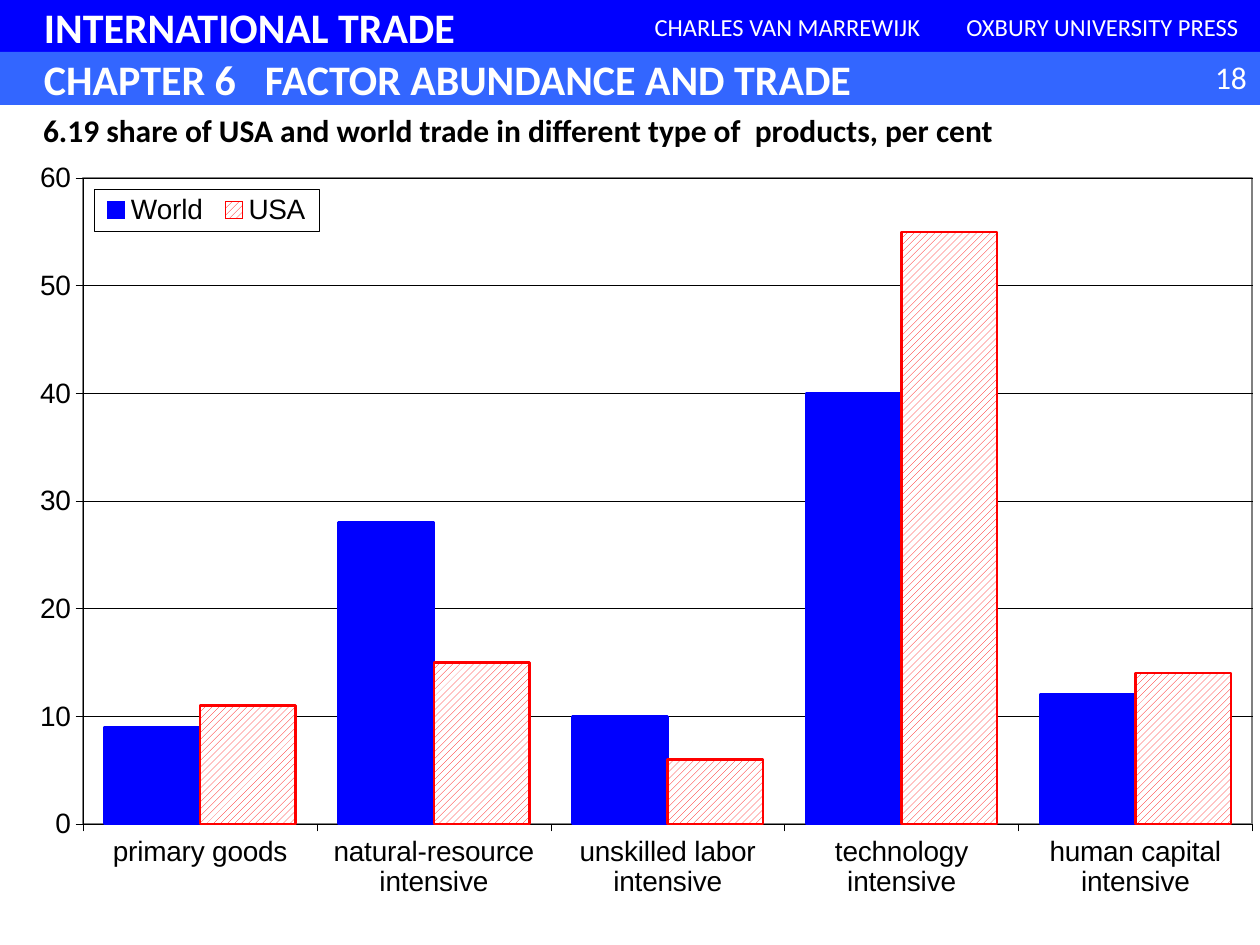
"""Build the slide on trade shares of the USA and the world by product type."""
from lxml import etree
from pptx import Presentation, util as u
from pptx.chart.data import CategoryChartData
from pptx.dml.color import RGBColor
from pptx.enum import chart as ch, dml, shapes, text
from pptx.oxml import parse_xml
from pptx.oxml.ns import nsdecls, qn

PX = 914400 / 126
WIDTH, HEIGHT, BAND = 1260, 945, 53
BLUE, LIGHT_BLUE, RED = "0000FF", "3366FF", "FF0000"
WHITE, BLACK, GREY = "FFFFFF", "000000", "808080"

CATEGORIES = ["primary goods", "natural-resource intensive", "unskilled labor intensive",
              "technology intensive", "human capital intensive"]
SHARES = {"World": [9, 28, 10, 40, 12], "USA": [11, 15, 6, 55, 14]}


def px(*lengths):
    """Turn pixel lengths into EMU."""
    return [u.Emu(round(length * PX)) for length in lengths]


def rgb(hex_colour):
    """Turn a hex string into a colour."""
    return RGBColor.from_string(hex_colour)


def write(shape, words, size, colour=WHITE, bold=False, align=text.PP_ALIGN.LEFT,
          anchor=text.MSO_ANCHOR.MIDDLE, left=13, after=0):
    """Fill a shape with one formatted paragraph and return the paragraph."""
    frame = shape.text_frame
    frame.word_wrap, frame.vertical_anchor = True, anchor
    frame.auto_size = text.MSO_AUTO_SIZE.NONE
    frame.margin_left, frame.margin_right, frame.margin_top, frame.margin_bottom = px(left, 13, 6, 6)
    paragraph = frame.paragraphs[0]
    paragraph.alignment, paragraph.space_after = align, u.Pt(after)
    run = paragraph.add_run()
    run.text = words
    run.font.name, run.font.size, run.font.bold = "Calibri", u.Pt(size), bold
    run.font.color.rgb = rgb(colour)
    return paragraph


def add_band(slide, box, fill, words, size, **style):
    """Add a filled header rectangle with text."""
    band = slide.shapes.add_shape(shapes.MSO_SHAPE.RECTANGLE, *px(*box))
    band.shadow.inherit = False
    band.fill.solid()
    band.fill.fore_color.rgb = rgb(fill)
    band.line.fill.background()
    return write(band, words, size, **style)


def add_tab_stop(paragraph, position):
    """Set one left tab stop, in pixels from the text edge."""
    tabs = etree.SubElement(paragraph._p.get_or_add_pPr(), qn("a:tabLst"))
    etree.SubElement(tabs, qn("a:tab"), pos=str(px(position)[0]), algn="l")


def add_header(slide):
    """Add the book and chapter bands with author, publisher and page number."""
    centre = text.PP_ALIGN.CENTER
    add_band(slide, (0, 0, WIDTH, BAND), BLUE, "INTERNATIONAL TRADE", 24, bold=True, left=44)
    for left, words in ((630, "CHARLES VAN MARREWIJK"), (945, "OXBURY UNIVERSITY PRESS")):
        add_band(slide, (left, 0, 315, BAND), BLUE, words, 14, align=centre)
    chapter = add_band(slide, (0, BAND - 1, WIDTH, BAND), LIGHT_BLUE,
                       "CHAPTER 6\tFACTOR ABUNDANCE AND TRADE", 24, bold=True, left=44)
    add_tab_stop(chapter, 221)
    page = slide.shapes.add_textbox(*px(1176, 52, 84, 50))
    write(page, "18", 18, align=text.PP_ALIGN.RIGHT, anchor=text.MSO_ANCHOR.TOP)


def add_heading(slide):
    """Place the chart heading in the title placeholder, in front of the chart."""
    heading = slide.shapes.title
    heading.left, heading.top, heading.width, heading.height = px(30, 105, 1230, 50)
    write(heading, "6.19 share of USA and world trade in different type of  products, per cent",
          18, colour=BLACK, bold=True, anchor=text.MSO_ANCHOR.TOP, after=6)
    slide.shapes._spTree.append(heading._element)


def style_font(font, size):
    """Apply the chart font."""
    font.name, font.size, font.color.rgb = "Arial", u.Pt(size), rgb(BLACK)


def style_line(line, colour, width):
    """Set colour and width of a line."""
    line.color.rgb, line.width = rgb(colour), u.Pt(width)


def make_layout(x, y, w, h, inner=False):
    """Return a manual chart layout in fractions of the chart."""
    target = '<c:layoutTarget val="inner"/>' if inner else ""
    modes = '<c:xMode val="edge"/><c:yMode val="edge"/>'
    sizes = "".join(f'<c:{tag} val="{value}"/>' for tag, value in zip("xywh", (x, y, w, h)))
    return parse_xml(f'<c:layout {nsdecls("c")}><c:manualLayout>{target}{modes}{sizes}'
                     '</c:manualLayout></c:layout>')


def make_area(line=None, width=0.25):
    """Return white area formatting with an optional outline."""
    stroke = f'<a:solidFill><a:srgbClr val="{line}"/></a:solidFill>' if line else "<a:noFill/>"
    return parse_xml(f'<c:spPr {nsdecls("c", "a")}><a:solidFill><a:srgbClr val="{WHITE}"/>'
                     f'</a:solidFill><a:ln w="{u.Pt(width)}">{stroke}</a:ln></c:spPr>')


def style_axes(chart):
    """Format both axes and the dotted gridlines."""
    for axis in (chart.category_axis, chart.value_axis):
        style_font(axis.tick_labels.font, 16)
        style_line(axis.format.line, BLACK, 0.25)
        axis.major_tick_mark = ch.XL_TICK_MARK.OUTSIDE
        axis.minor_tick_mark = ch.XL_TICK_MARK.NONE
    values = chart.value_axis
    values.minimum_scale, values.maximum_scale, values.major_unit = 0, 60, 10
    values.tick_labels.number_format = "0"
    values.tick_labels.number_format_is_linked = False
    grid = values.major_gridlines.format.line
    style_line(grid, BLACK, 0.25)
    grid.dash_style = dml.MSO_LINE.ROUND_DOT


def style_series(plot):
    """Fill World solid and USA hatched."""
    plot.gap_width, plot.overlap, plot.vary_by_categories = 45, 0, False
    world, usa = plot.series
    world.format.fill.solid()
    world.format.fill.fore_color.rgb = rgb(BLUE)
    hatch = usa.format.fill
    hatch.patterned()
    hatch.pattern = dml.MSO_PATTERN.WIDE_UPWARD_DIAGONAL
    hatch.fore_color.rgb, hatch.back_color.rgb = rgb(RED), rgb(WHITE)
    for series, outline in ((world, BLUE), (usa, RED)):
        style_line(series.format.line, outline, 1.5)
        series.invert_if_negative = False


def place_legend(chart):
    """Put a boxed legend inside the plot at the top left."""
    chart.has_legend = True
    chart.legend.position = ch.XL_LEGEND_POSITION.TOP
    chart.legend.include_in_layout = False
    style_font(chart.legend.font, 16)
    legend = chart.legend._element
    for blank in legend.findall(qn("c:layout")):
        legend.remove(blank)
    legend.find(qn("c:legendPos")).addnext(make_layout(0.075, 0.1, 0.178, 0.05))
    legend.find(qn("c:txPr")).addprevious(make_area(BLACK))


def add_share_chart(slide):
    """Add the clustered column chart of trade shares."""
    data = CategoryChartData(number_format="0")
    data.categories = CATEGORIES
    for name, values in SHARES.items():
        data.add_series(name, values)
    chart = slide.shapes.add_chart(ch.XL_CHART_TYPE.COLUMN_CLUSTERED,
                                   *px(0, 105, WIDTH, HEIGHT - 105), data).chart
    chart.has_title = False
    style_font(chart.font, 10)
    style_axes(chart)
    style_series(chart.plots[0])
    place_legend(chart)
    space = chart._chartSpace
    space.find(qn("c:txPr")).addprevious(make_area())
    area = space.find(qn("c:chart")).find(qn("c:plotArea"))
    for blank in area.findall(qn("c:layout")):
        area.remove(blank)
    area.insert(0, make_layout(0.066, 0.087, 0.928, 0.769, inner=True))
    area.append(make_area(GREY, 1))


def main():
    """Build and save the slide."""
    deck = Presentation()
    deck.slide_width, deck.slide_height = px(WIDTH, HEIGHT)
    slide = deck.slides.add_slide(deck.slide_layouts[5])
    add_header(slide)
    add_share_chart(slide)
    add_heading(slide)
    deck.save("out.pptx")


if __name__ == "__main__":
    main()
